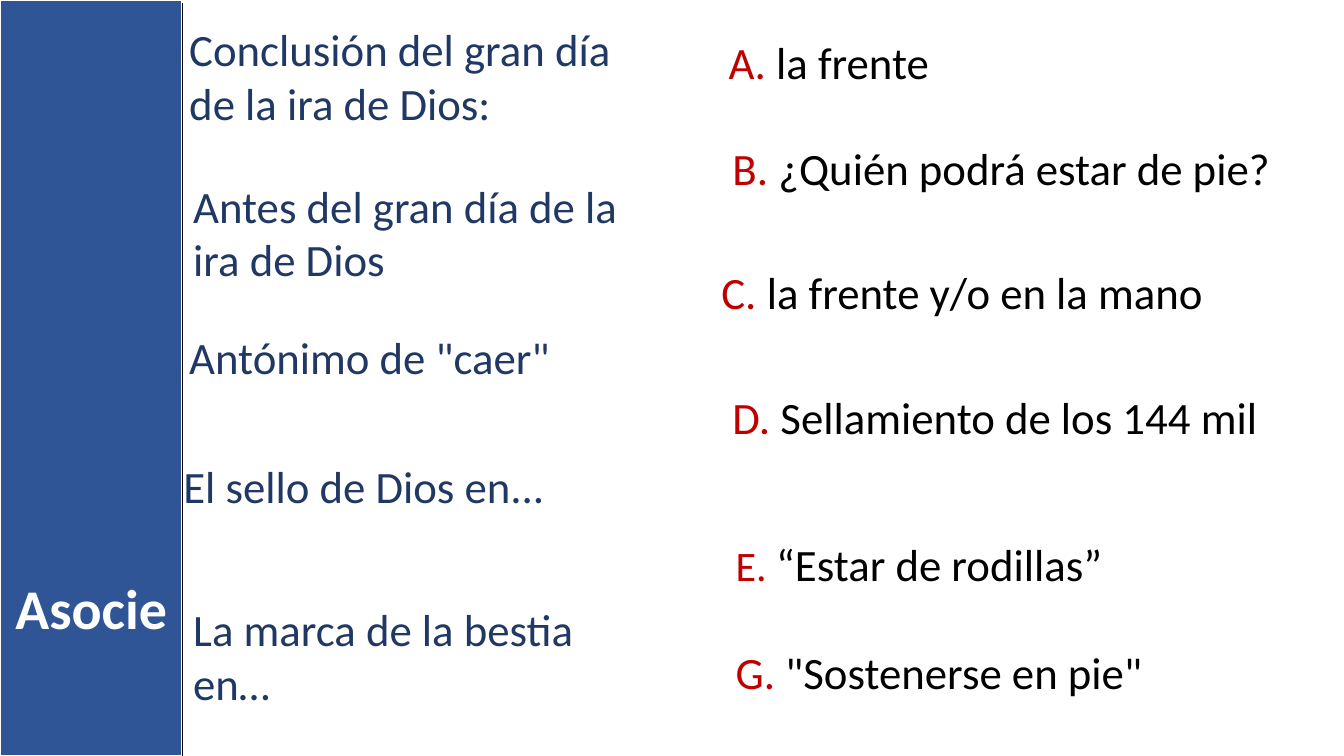
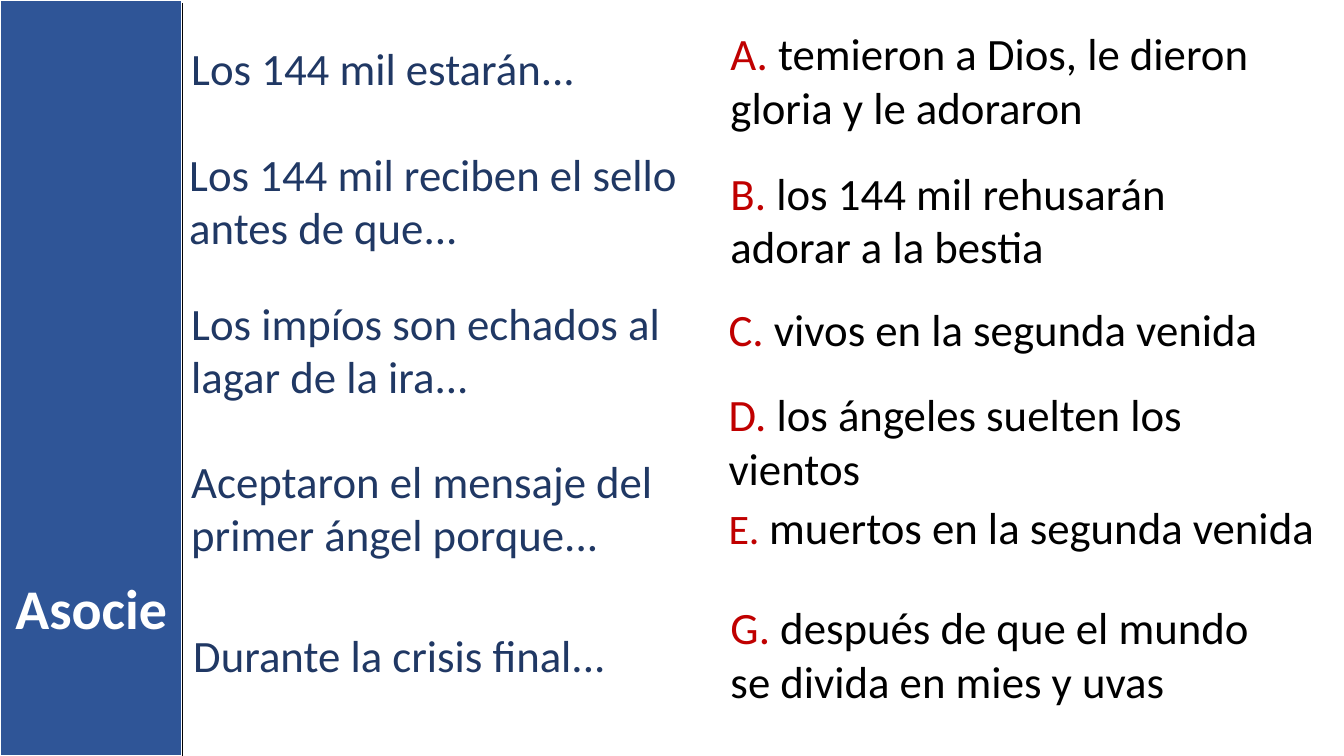
"""Build two matching-exercise slides with a shared side band."""
from lxml import etree
from pptx import Presentation
from pptx.dml.color import RGBColor
from pptx.enum import shapes, text
from pptx.oxml import ns
from pptx.util import Cm, Pt

BLUE = RGBColor(0x2F, 0x55, 0x97)
NAVY = RGBColor(0x20, 0x38, 0x64)
RED = RGBColor(0xC0, 0x00, 0x00)
BLACK = RGBColor(0x00, 0x00, 0x00)
WHITE = RGBColor(0xFF, 0xFF, 0xFF)
FONT = "Calibri"

WIDTH, HEIGHT = 33.87, 19.05
BAND = (0, 0, 4.6, HEIGHT)
QUESTIONS = (4.5, 0)
ANSWERS = (18, 0)
LINE_HEIGHTS = {1: 1.63, 2: 3}

# Questions are (dx, dy, width, lines, text); answers add a letter before the text.
SLIDES = [
    (
        [
            (0.02, 0.43, 12.52, 2, "Conclusión del gran día de la ira de Dios:"),
            (0.12, 4.37, 11.73, 2, "Antes del gran día de la ira de Dios"),
            (0.02, 8.18, 11.68, 1, 'Antónimo de "caer"'),
            (-0.13, 11.43, 11.68, 1, "El sello de Dios en..."),
            (0.12, 15.04, 11.2, 2, "La marca de la bestia en…"),
        ],
        [
            (0.11, 0.74, 14.22, 1, "A", "la frente"),
            (0.21, 3.43, 15.04, 1, "B", "¿Quién podrá estar de pie?"),
            (-0.07, 6.55, 14.58, 1, "C", "la frente y/o en la mano"),
            (0.21, 9.7, 14.73, 1, "D", "Sellamiento de los 144 mil"),
            (0.29, 13.41, 14.05, 1, "E", "“Estar de rodillas”"),
            (0.29, 16.13, 14.2, 1, "G", '"Sostenerse en pie"'),
        ],
    ),
    (
        [
            (0.07, 0.89, 15.01, 1, "Los 144 mil estarán..."),
            (0.02, 3.56, 13.56, 2, "Los 144 mil reciben el sello antes de que..."),
            (0.07, 7.32, 12.42, 2, "Los impíos son echados al lagar de la ira..."),
            (0.07, 11.3, 12.95, 2, "Aceptaron el mensaje del primer ángel porque..."),
            (0.12, 15.7, 11.2, 1, "Durante la crisis final..."),
        ],
        [
            (0.16, 0.53, 14.86, 2, "A", "temieron a Dios, le dieron gloria y le adoraron"),
            (0.16, 4.04, 14.63, 2, "B", "los 144 mil rehusarán adorar a la bestia"),
            (0.11, 7.49, 14.73, 1, "C", "vivos en la segunda venida"),
            (0.11, 9.63, 14.68, 2, "D", "los ángeles suelten los vientos"),
            (0.11, 12.47, 15.37, 1, "E", "muertos en la segunda venida"),
            (0.16, 14.99, 14.63, 2, "G", "después de que el mundo se divida en mies y uvas"),
        ],
    ),
]


def add_text(p, content, size=32, color=BLACK, bold=False):
    """Append a formatted run to a paragraph."""
    r = p.add_run()
    r.text = content
    r.font.name, r.font.size = FONT, Pt(size)
    r.font.color.rgb, r.font.bold = color, bold


def add_item(s, box, dx, dy, width, lines):
    """Add a wrapped text box offset from its column and return its paragraph."""
    sp = s.shapes.add_textbox(
        Cm(box[0] + dx), Cm(box[1] + dy), Cm(width), Cm(LINE_HEIGHTS[lines])
    )
    tf = sp.text_frame
    tf.word_wrap = True
    tf.auto_size = text.MSO_AUTO_SIZE.SHAPE_TO_FIT_TEXT
    return tf.paragraphs[0]


def add_questions(s, box, items):
    """Place the column of statements to match."""
    for *place, content in items:
        add_text(add_item(s, box, *place), content, color=NAVY)


def add_answers(s, box, items):
    """Place the column of lettered answers."""
    for *place, letter, content in items:
        p = add_item(s, box, *place)
        add_text(p, f"{letter}. ", size=30 if letter == "E" else 32, color=RED)
        add_text(p, content)


def add_band(s, box):
    """Draw the side band with its title and right edge line."""
    x, y, w, h = box
    band = s.shapes.add_shape(
        shapes.MSO_SHAPE.RECTANGLE, Cm(x), Cm(y), Cm(w), Cm(h)
    )
    band.shadow.inherit = False
    band.fill.solid()
    band.fill.fore_color.rgb = BLUE
    band.line.color.rgb, band.line.width = WHITE, Pt(1.5)

    title = s.shapes.title
    title.left, title.top = Cm(x), Cm(y + 14.33)
    title.width, title.height = Cm(w), Cm(1.96)
    tf = title.text_frame
    tf.word_wrap = True
    tf.auto_size = text.MSO_AUTO_SIZE.NONE
    tf.vertical_anchor = text.MSO_ANCHOR.TOP
    p = tf.paragraphs[0]
    p.alignment = text.PP_ALIGN.CENTER
    add_text(p, "Asocie", size=40, color=WHITE, bold=True)
    band.element.addnext(title.element)

    edge = s.shapes.add_connector(
        shapes.MSO_CONNECTOR.STRAIGHT, Cm(x + w), Cm(y + 0.08), Cm(x + w), Cm(y + h)
    )
    edge.line.color.rgb, edge.line.width = BLACK, Pt(1)
    etree.SubElement(edge.element.spPr, ns.qn("a:effectLst"))


def add_matching_slide(prs, questions, answers):
    """Add one matching-exercise slide."""
    s = prs.slides.add_slide(prs.slide_layouts[5])
    add_band(s, BAND)
    add_questions(s, QUESTIONS, questions)
    add_answers(s, ANSWERS, answers)


def main():
    """Build and save the presentation."""
    prs = Presentation()
    prs.slide_width, prs.slide_height = Cm(WIDTH), Cm(HEIGHT)
    for questions, answers in SLIDES:
        add_matching_slide(prs, questions, answers)
    prs.save("out.pptx")


if __name__ == "__main__":
    main()
